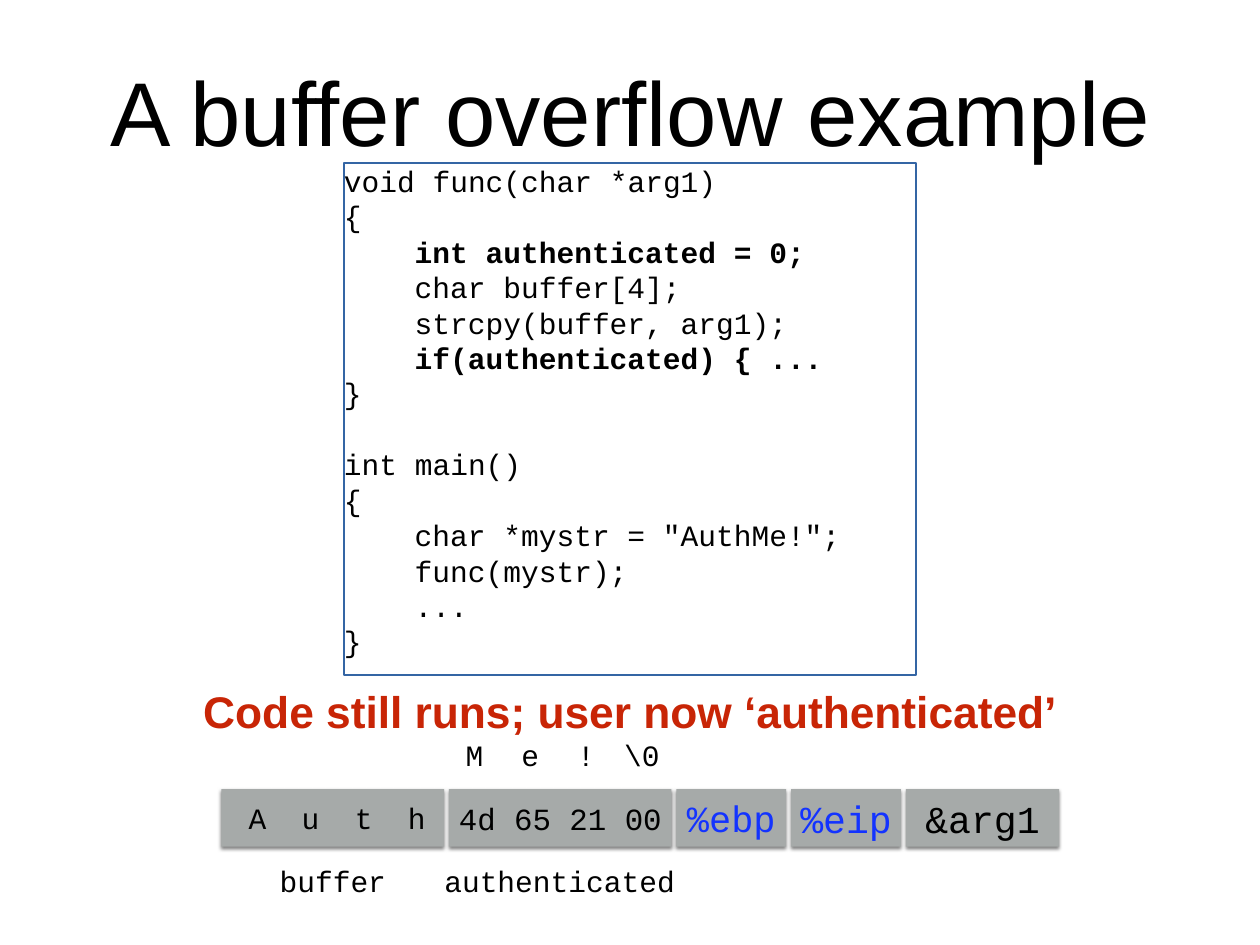
import pptx
import pptx.dml.color
import pptx.enum.shapes
import pptx.enum.text
import pptx.oxml
import pptx.oxml.ns
import pptx.util

Cm, Pt = pptx.util.Cm, pptx.util.Pt
RGBColor = pptx.dml.color.RGBColor
Anchor = pptx.enum.text.MSO_ANCHOR
Align = pptx.enum.text.PP_ALIGN

BLACK = RGBColor(0x00, 0x00, 0x00)
BLUE = RGBColor(0x13, 0x33, 0xFF)
RED = RGBColor(0xC8, 0x25, 0x06)
GREY = RGBColor(0xA6, 0xAA, 0xA9)
OUTLINE = RGBColor(0x34, 0x65, 0xA4)

# Content
TITLE = "A buffer overflow example"
HEADLINE = "Code still runs; user now ‘authenticated’"
FUNCTIONS = [  # each line: indent level, bold, text
    [
        (0, False, "void func(char *arg1)"),
        (0, False, "{"),
        (1, True, "int authenticated = 0;"),
        (1, False, "char buffer[4];"),
        (1, False, "strcpy(buffer, arg1);"),
        (1, True, "if(authenticated) { ..."),
        (0, False, "}"),
    ],
    [
        (0, False, "int main()"),
        (0, False, "{"),
        (1, False, 'char *mystr = "AuthMe!";'),
        (1, False, "func(mystr);"),
        (1, False, "..."),
        (0, False, "}"),
    ],
]
STACK = [  # text, width in cm, size, colour, letter spacing in points
    ("A u t h", 6.38, 24, BLACK, 7.2),
    ("4d 65 21 00", 6.38, 25, BLACK, 0),
    ("%ebp", 3.15, 30, BLUE, 0),
    ("%eip", 3.15, 31, BLUE, 0),
    ("&arg1", 4.39, 31, BLACK, 0),
]
OVERFLOW = ["M", "e", "!", "\\0"]
VARIABLES = [("buffer", 9.54, 3.38), ("authenticated", 16.04, 6.93)]  # centre, width

# Layout in cm
STACK_LEFT, STACK_TOP, STACK_HEIGHT, STACK_GAP = 6.35, 22.63, 1.65, 0.14
BYTE_CENTRE, BYTE_PITCH, BYTE_WIDTH, BYTE_TOP = 13.6, 1.6, 1.35, 20.98
LABEL_TOP, LABEL_HEIGHT = 24.61, 1.3
CODE_INDENT, CODE_PITCH = Cm(2.03), Pt(28.8)

SHADOW = (
    f'<a:effectLst {pptx.oxml.ns.nsdecls("a")}>'
    '<a:outerShdw blurRad="38100" dist="25400" dir="5400000" rotWithShape="0">'
    '<a:srgbClr val="000000"><a:alpha val="50000"/></a:srgbClr>'
    "</a:outerShdw></a:effectLst>"
)


def set_values(target, values):
    for name, value in values.items():
        setattr(target, name, value)


def set_frame(frame, anchor=Anchor.MIDDLE, wrap=True):
    set_values(frame, {
        "margin_left": 0, "margin_right": 0, "margin_top": 0, "margin_bottom": 0,
        "vertical_anchor": anchor, "word_wrap": wrap,
        "auto_size": pptx.enum.text.MSO_AUTO_SIZE.NONE,
    })


def write(para, text, size, font="Courier New", colour=BLACK, bold=False,
          align=Align.CENTER):
    para.alignment = align
    span = para.add_run()
    span.text = text
    set_values(span.font, {"size": Pt(size), "name": font, "bold": bold})
    span.font.color.rgb = colour
    return span


def add_label(shapes, text, centre, top, width):
    box = shapes.add_textbox(Cm(centre - width / 2), Cm(top), Cm(width), Cm(LABEL_HEIGHT))
    set_frame(box.text_frame, wrap=False)
    write(box.text_frame.paragraphs[0], text, 24)


def add_title(page):
    title = page.shapes.title
    set_values(title, {"left": Cm(2.64), "top": Cm(1.24),
                       "width": Cm(30.84), "height": Cm(3.84)})
    set_frame(title.text_frame)
    write(title.text_frame.paragraphs[0], TITLE, 73.6, "Arial")


def add_code(page):
    box = page.shapes.add_textbox(Cm(9.86), Cm(4.67), Cm(16.41), Cm(14.68))
    box.line.color.rgb = OUTLINE
    box.line.width = Pt(1.5)
    frame = box.text_frame
    set_frame(frame, Anchor.TOP)
    para = frame.paragraphs[0]
    for number, function in enumerate(FUNCTIONS):
        for row, (level, bold, text) in enumerate(function):
            if number or row:
                para = frame.add_paragraph()
            write(para, text, 24, bold=bold, align=Align.LEFT)
            para.line_spacing = CODE_PITCH
            para.space_before = CODE_PITCH if number and not row else Pt(0)
            para._p.get_or_add_pPr().set("marL", str(level * CODE_INDENT))


def add_stack(page):
    left = STACK_LEFT
    for text, width, size, colour, spacing in STACK:
        cell = page.shapes.add_shape(
            pptx.enum.shapes.MSO_SHAPE.RECTANGLE,
            Cm(left), Cm(STACK_TOP), Cm(width), Cm(STACK_HEIGHT))
        cell.fill.solid()
        cell.fill.fore_color.rgb = GREY
        cell.line.fill.background()
        cell._element.spPr.append(pptx.oxml.parse_xml(SHADOW))
        set_frame(cell.text_frame)
        span = write(cell.text_frame.paragraphs[0], text, size, colour=colour)
        if spacing:
            span._r.get_or_add_rPr().set("spc", str(round(spacing * 100)))
            # Balances the spacing after the last letter
            cell.text_frame.margin_left = Pt(spacing)
        left += width + STACK_GAP


def add_headline(page):
    box = page.shapes.add_textbox(Cm(5.66), Cm(19.48), Cm(24.82), Cm(1.8))
    set_frame(box.text_frame, wrap=False)
    write(box.text_frame.paragraphs[0], HEADLINE, 36, "Arial", RED, True)


def main():
    deck = pptx.Presentation()
    deck.slide_width, deck.slide_height = Cm(36.12), Cm(27.1)
    page = deck.slides.add_slide(deck.slide_layouts[5])
    add_title(page)
    add_code(page)
    add_stack(page)
    # Variable names below the stack, overflowing characters above it
    for text, centre, width in VARIABLES:
        add_label(page.shapes, text, centre, LABEL_TOP, width)
    letters = page.shapes.add_group_shape()
    for index, text in enumerate(OVERFLOW):
        add_label(letters.shapes, text, BYTE_CENTRE + index * BYTE_PITCH,
                  BYTE_TOP, BYTE_WIDTH)
    add_headline(page)
    deck.save("out.pptx")


if __name__ == "__main__":
    main()
